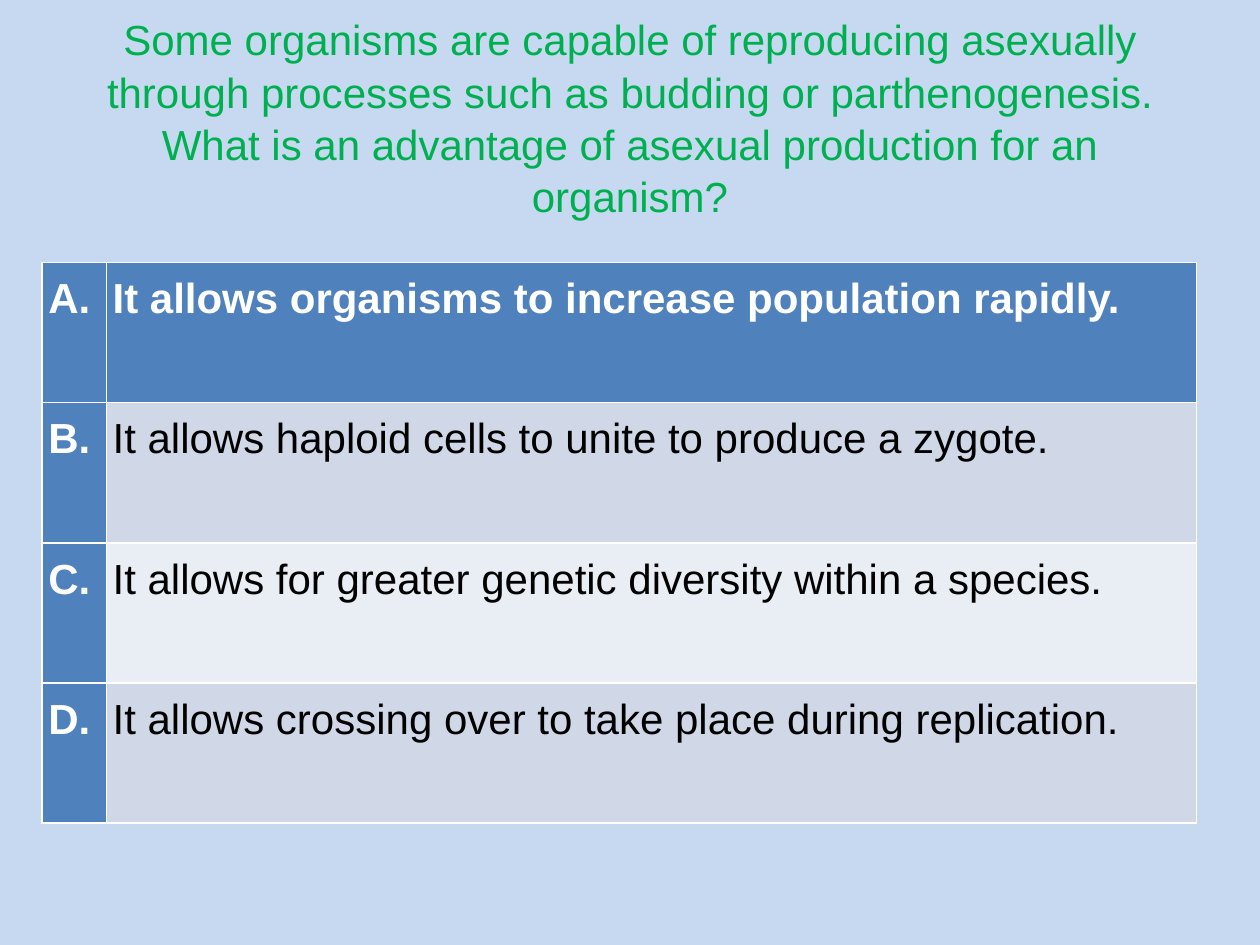
from dataclasses import dataclass

from pptx import Presentation
from pptx.dml.color import RGBColor
from pptx.enum.text import MSO_ANCHOR, MSO_AUTO_SIZE, PP_ALIGN
from pptx.util import Pt

LEFT, CENTER = PP_ALIGN.LEFT, PP_ALIGN.CENTER
MIDDLE, NO_FIT = MSO_ANCHOR.MIDDLE, MSO_AUTO_SIZE.NONE

BACKGROUND = RGBColor(0xC6, 0xD9, 0xF1)
GREEN = RGBColor(0x00, 0xB0, 0x50)
BLUE = RGBColor(0x4F, 0x81, 0xBD)
BAND_DARK = RGBColor(0xD0, 0xD8, 0xE8)
BAND_LIGHT = RGBColor(0xE9, 0xED, 0xF4)
WHITE = RGBColor(0xFF, 0xFF, 0xFF)
BLACK = RGBColor(0x00, 0x00, 0x00)

QUESTION = ("Some organisms are capable of reproducing asexually through processes "
            "such as budding or parthenogenesis. What is an advantage of asexual "
            "production for an organism?")
COLUMN_WIDTHS = (36.8, 623)
ROW_HEIGHT = 80.1
CELL_MARGINS = {f"margin_{side}": Pt(3.6) for side in ("left", "top", "right", "bottom")}


@dataclass
class Answer:
    letter: str
    text: str
    fill: RGBColor
    color: RGBColor = BLACK
    bold: bool = False


ANSWERS = [
    Answer("A.", "It allows organisms to increase population rapidly.", BLUE, WHITE, True),
    Answer("B.", "It allows haploid cells to unite to produce a zygote.", BAND_DARK),
    Answer("C.", "It allows for greater genetic diversity within a species.", BAND_LIGHT),
    Answer("D.", "It allows crossing over to take place during replication.", BAND_DARK),
]


def set_attrs(obj, values: dict) -> None:
    for name, value in values.items():
        setattr(obj, name, value)


def write(tf, text: str, color: RGBColor, bold: bool, align, spacing: float) -> None:
    p = tf.paragraphs[0]
    set_attrs(p, {"alignment": align, "line_spacing": spacing})
    r = p.add_run()
    r.text = text
    set_attrs(r.font, {"name": "Arial", "size": Pt(24), "bold": bold})
    r.font.color.rgb = color


def fill_cell(cell, text: str, fill: RGBColor, color: RGBColor, bold: bool) -> None:
    set_attrs(cell, CELL_MARGINS)
    cell.fill.solid()
    cell.fill.fore_color.rgb = fill
    write(cell.text_frame, text, color, bold, LEFT, 1.15)


def add_answers(s, answers: list[Answer]) -> None:
    # The default table style supplies the white rules
    table = s.shapes.add_table(len(answers), len(COLUMN_WIDTHS), Pt(24), Pt(150),
                               Pt(sum(COLUMN_WIDTHS)), Pt(ROW_HEIGHT * len(answers))).table
    table.first_col = True
    for column, width in zip(table.columns, COLUMN_WIDTHS):
        column.width = Pt(width)
    for row, answer in zip(table.rows, answers):
        row.height = Pt(ROW_HEIGHT)
        fill_cell(row.cells[0], answer.letter, BLUE, WHITE, True)
        fill_cell(row.cells[1], answer.text, answer.fill, answer.color, answer.bold)


def main() -> None:
    prs = Presentation()
    set_attrs(prs, {"slide_width": Pt(720), "slide_height": Pt(540)})
    s = prs.slides.add_slide(prs.slide_layouts[5])
    s.background.fill.solid()
    s.background.fill.fore_color.rgb = BACKGROUND

    # Question
    title = s.shapes.title
    set_attrs(title, {"left": Pt(36), "top": Pt(21.6), "width": Pt(648), "height": Pt(90)})
    tf = title.text_frame
    set_attrs(tf, {"word_wrap": True, "auto_size": NO_FIT, "vertical_anchor": MIDDLE})
    write(tf, QUESTION, GREEN, False, CENTER, 1.04)

    # Answer choices
    add_answers(s, ANSWERS)
    prs.save("out.pptx")


if __name__ == "__main__":
    main()
